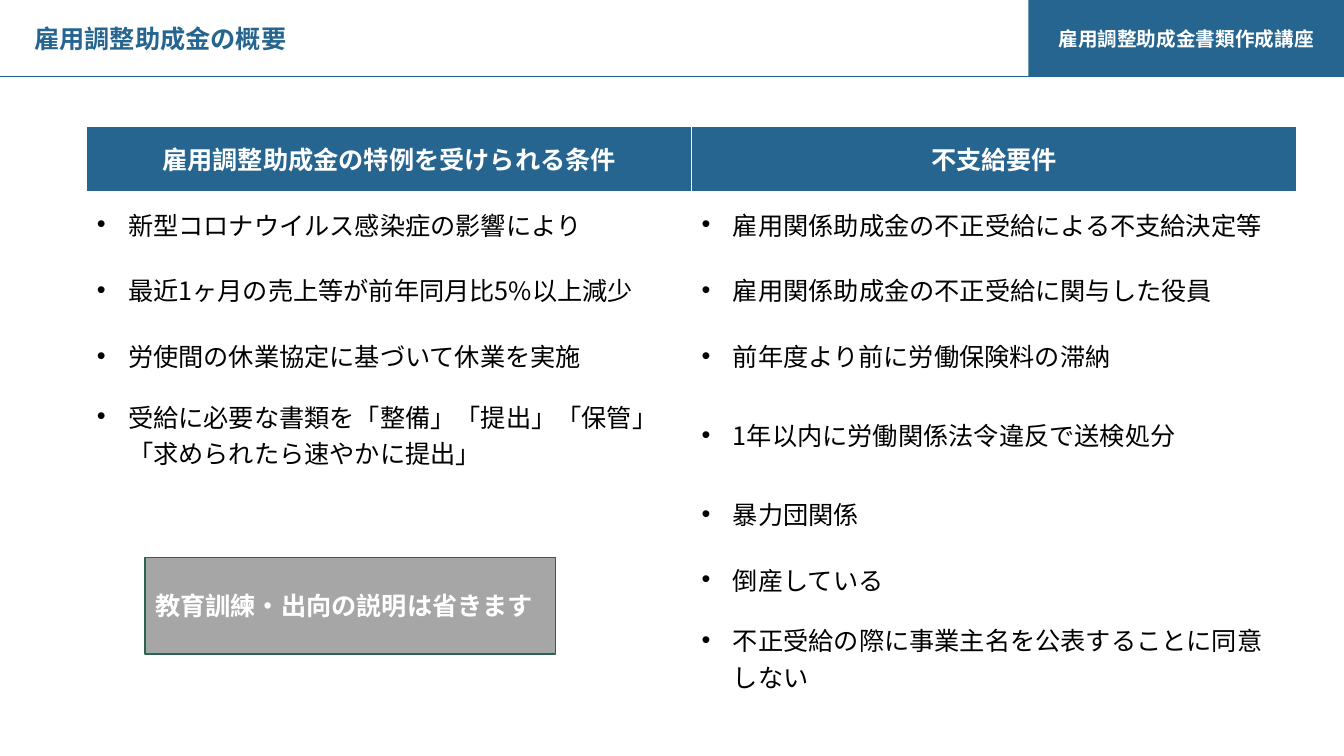
from itertools import zip_longest

from lxml.etree import SubElement
from pptx import Presentation
from pptx.dml.color import RGBColor
from pptx.enum.shapes import MSO_CONNECTOR, MSO_SHAPE
from pptx.enum.text import MSO_ANCHOR, MSO_AUTO_SIZE, PP_ALIGN
from pptx.oxml.ns import qn
from pptx.util import Inches, Pt

FONT = "Noto Sans CJK JP"
BLUE, WHITE, BLACK, GRAY, GREEN = "266590", "FFFFFF", "000000", "A6A6A6", "29654E"
HEADERS = ["雇用調整助成金の特例を受けられる条件", "不支給要件"]
CONDITIONS = [
    "新型コロナウイルス感染症の影響により",
    "最近1ヶ月の売上等が前年同月比5%以上減少",
    "労使間の休業協定に基づいて休業を実施",
    "受給に必要な書類を「整備」「提出」「保管」「求められたら速やかに提出」",
]
EXCLUSIONS = [
    "雇用関係助成金の不正受給による不支給決定等",
    "雇用関係助成金の不正受給に関与した役員",
    "前年度より前に労働保険料の滞納",
    "1年以内に労働関係法令違反で送検処分",
    "暴力団関係",
    "倒産している",
    "不正受給の際に事業主名を公表することに同意しない",
]
ROW_HEIGHT, TALL_ROW_HEIGHT, TALL_ROWS = 0.65, 0.92, (4, 7)


def rgb(color):
    return RGBColor.from_string(color)


def write(tf, text, size=18, color=WHITE, bold=True, align=PP_ALIGN.LEFT, bullet=False):
    p = tf.paragraphs[0]
    p.alignment = align
    r = p.add_run()
    r.text = text
    r.font.name = FONT
    r.font.size = Pt(size)
    r.font.bold = bold
    r.font.color.rgb = rgb(color)
    SubElement(r.font._element, qn("a:ea")).set("typeface", FONT)
    if bullet:
        pPr = p._p.get_or_add_pPr()
        pPr.set("marL", str(Inches(0.31)))
        pPr.set("indent", str(-Inches(0.31)))
        SubElement(pPr, qn("a:buFont")).set("typeface", "Arial")
        SubElement(pPr, qn("a:buChar")).set("char", "•")


def add_title(s, text):
    sp = s.shapes.title
    sp.left, sp.top, sp.width, sp.height = map(Inches, (0.24, 0.18, 2.73, 0.4))
    tf = sp.text_frame
    tf.word_wrap = False
    tf.auto_size = MSO_AUTO_SIZE.SHAPE_TO_FIT_TEXT
    tf.vertical_anchor = MSO_ANCHOR.TOP
    write(tf, text, color=BLUE)


def add_box(s, box, text, fill, line=None, **fmt):
    sp = s.shapes.add_shape(MSO_SHAPE.RECTANGLE, *map(Inches, box))
    sp.shadow.inherit = False
    sp.fill.solid()
    sp.fill.fore_color.rgb = rgb(fill)
    if line:
        sp.line.color.rgb = rgb(line)
        sp.line.width = Pt(1)
    else:
        sp.line.fill.background()
    tf = sp.text_frame
    tf.word_wrap = True
    tf.vertical_anchor = MSO_ANCHOR.MIDDLE
    write(tf, text, **fmt)


def add_rule(s, x1, x2, y, color):
    line = s.shapes.add_connector(MSO_CONNECTOR.STRAIGHT, Inches(x1), Inches(y), Inches(x2), Inches(y))
    line.line.color.rgb = rgb(color)
    line.line.width = Pt(0.5)
    SubElement(line._element.spPr, qn("a:effectLst"))


def fill_header(cell, text):
    tcPr = cell._tc.get_or_add_tcPr()
    for side in ("lnL", "lnR", "lnT"):
        ln = SubElement(tcPr, qn(f"a:{side}"), w=str(Pt(1)))
        SubElement(SubElement(ln, qn("a:solidFill")), qn("a:srgbClr")).set("val", WHITE)
    cell.fill.solid()
    cell.fill.fore_color.rgb = rgb(BLUE)
    write(cell.text_frame, text, align=PP_ALIGN.CENTER)


def fill_item(cell, text):
    cell.fill.background()
    if text:
        write(cell.text_frame, text, color=BLACK, bold=False, bullet=True)


def add_requirements(s):
    rows = [HEADERS, *zip_longest(CONDITIONS, EXCLUSIONS)]
    frame = s.shapes.add_table(len(rows), 2, Inches(0.86), Inches(1.25), Inches(12), Inches(5.72))
    table = frame.table
    table.first_row = table.horz_banding = False
    for i, texts in enumerate(rows):
        table.rows[i].height = Inches(TALL_ROW_HEIGHT if i in TALL_ROWS else ROW_HEIGHT)
        for j, text in enumerate(texts):
            cell = table.cell(i, j)
            cell.vertical_anchor = MSO_ANCHOR.MIDDLE
            if i == 0:
                fill_header(cell, text)
            else:
                fill_item(cell, text)


def main():
    prs = Presentation()
    prs.slide_width, prs.slide_height = Inches(13.33), Inches(7.5)
    s = prs.slides.add_slide(prs.slide_layouts[5])
    add_box(s, (10.2, 0, 3.13, 0.76), "雇用調整助成金書類作成講座", BLUE, size=14, align=PP_ALIGN.CENTER)
    add_rule(s, 13.33, 0, 0.76, BLUE)
    add_title(s, "雇用調整助成金の概要")
    add_requirements(s)
    add_box(s, (1.44, 5.53, 4.07, 0.96), "教育訓練・出向の説明は省きます", GRAY, line=GREEN)
    prs.save("out.pptx")


if __name__ == "__main__":
    main()
